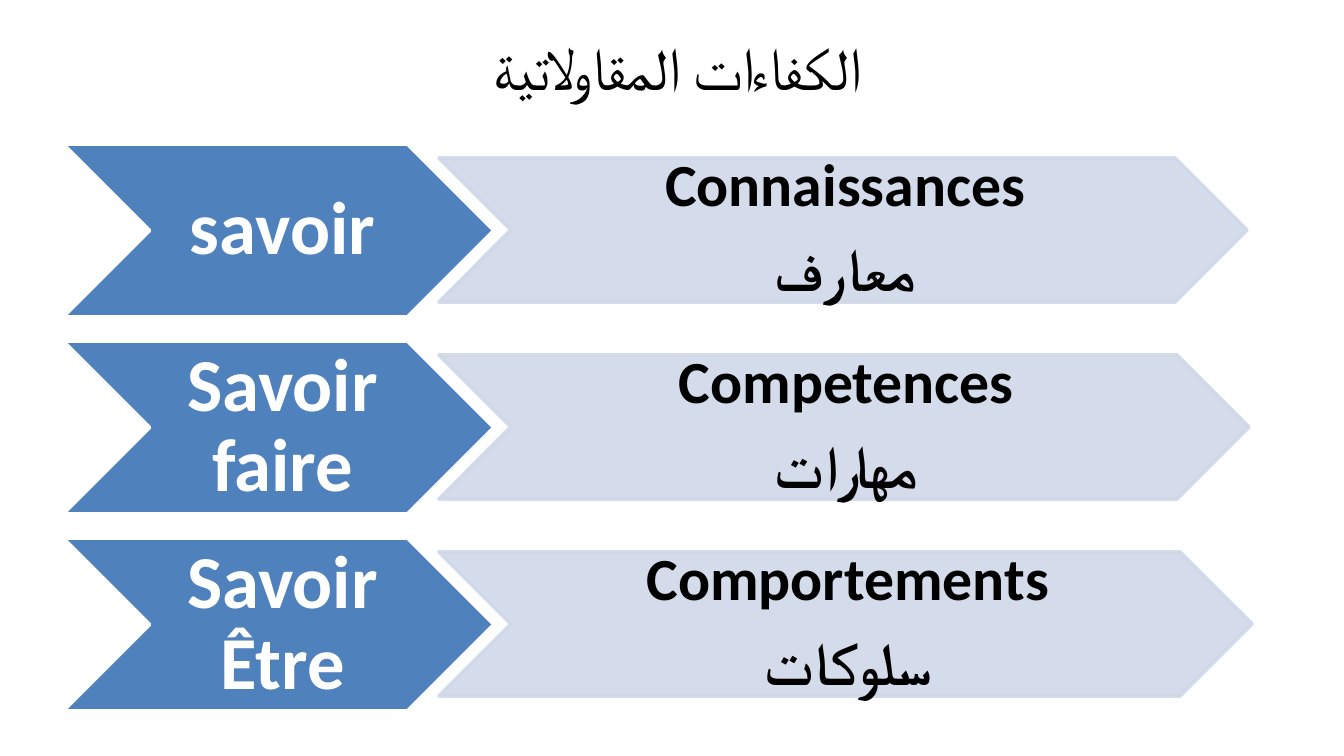
import pptx
import pptx.dml.color
import pptx.enum.shapes
import pptx.enum.text
import pptx.oxml
import pptx.oxml.ns
import pptx.util

RGB = pptx.dml.color.RGBColor
BLUE = RGB(0x4F, 0x81, 0xBD)
PALE = RGB(0xD0, 0xD8, 0xE8)
WHITE = RGB(0xFF, 0xFF, 0xFF)
BLACK = RGB(0x00, 0x00, 0x00)

PX_PER_INCH = 134.4
TOP, PITCH = 144, 197
HEAD_LEFT, HEAD_W, HEAD_H = 63, 431, 173
BODY_LEFT, BODY_H = 439, 144

ROWS = [
    ("savoir", ["Connaissances", "معارف"], 808),
    ("Savoir faire", ["Competences", "مهارات"], 810),
    ("Savoir Être", ["Comportements", "سلوكات"], 813),
]


def px(n):
    return pptx.util.Inches(n / PX_PER_INCH)


def format_paragraph(p, size, color, bold):
    p.alignment = pptx.enum.text.PP_ALIGN.CENTER
    p.line_spacing = 0.9
    p.font.name = "Calibri"
    p.font.size = pptx.util.Pt(size)
    p.font.bold = bold
    p.font.color.rgb = color


def set_opacity(sp, percent):
    """Apply the opacity to both the fill and the line."""
    for clr in sp._element.spPr.iter(pptx.oxml.ns.qn("a:srgbClr")):
        alpha = pptx.oxml.parse_xml(
            f'<a:alpha {pptx.oxml.ns.nsdecls("a")} val="{percent * 1000}"/>')
        clr.append(alpha)


def add_title(s, text):
    sp = s.shapes.title
    sp.left, sp.top, sp.width, sp.height = px(347), px(42), px(661), px(68)
    tf = sp.text_frame
    tf.text = text
    tf.word_wrap = True
    tf.auto_size = pptx.enum.text.MSO_AUTO_SIZE.NONE
    tf.vertical_anchor = pptx.enum.text.MSO_ANCHOR.BOTTOM
    p = tf.paragraphs[0]
    format_paragraph(p, 32, BLACK, False)
    p._p.get_or_add_pPr().set("rtl", "1")
    p.runs[0]._r.get_or_add_rPr().set("spc", "-50")


def add_chevron(s, box, lines, fill, line, size, color, insets):
    """Draw a chevron with centred bold lines; insets are left and top/bottom."""
    sp = s.shapes.add_shape(
        pptx.enum.shapes.MSO_SHAPE.CHEVRON, *[px(n) for n in box])
    sp.shadow.inherit = False
    sp.fill.solid()
    sp.fill.fore_color.rgb = fill
    sp.line.color.rgb = line
    sp.line.width = pptx.util.Pt(2)
    tf = sp.text_frame
    tf.word_wrap = True
    tf.vertical_anchor = pptx.enum.text.MSO_ANCHOR.MIDDLE
    tf.margin_left, tf.margin_right = px(insets[0]), 0
    tf.margin_top = tf.margin_bottom = px(insets[1])
    tf.text = "\n".join(lines)
    for p in tf.paragraphs:
        format_paragraph(p, size, color, True)
        p.space_after = pptx.util.Pt(round(size * 0.35))
    return sp


def main():
    prs = pptx.Presentation()
    prs.slide_width, prs.slide_height = px(1344), px(756)
    s = prs.slides.add_slide(prs.slide_layouts[5])
    add_title(s, "الكفاءات المقاولاتية")
    for i, (head, body, body_w) in enumerate(ROWS):
        top = TOP + i * PITCH
        add_chevron(s, (HEAD_LEFT, top, HEAD_W, HEAD_H), [head],
                    BLUE, WHITE, 40, WHITE, (8, 4))
        body_top = top + (HEAD_H - BODY_H) // 2
        sp = add_chevron(s, (BODY_LEFT, body_top, body_w, BODY_H), body,
                         PALE, PALE, 32, BLACK, (5, 3))
        set_opacity(sp, 90)
    prs.save("out.pptx")


if __name__ == "__main__":
    main()
